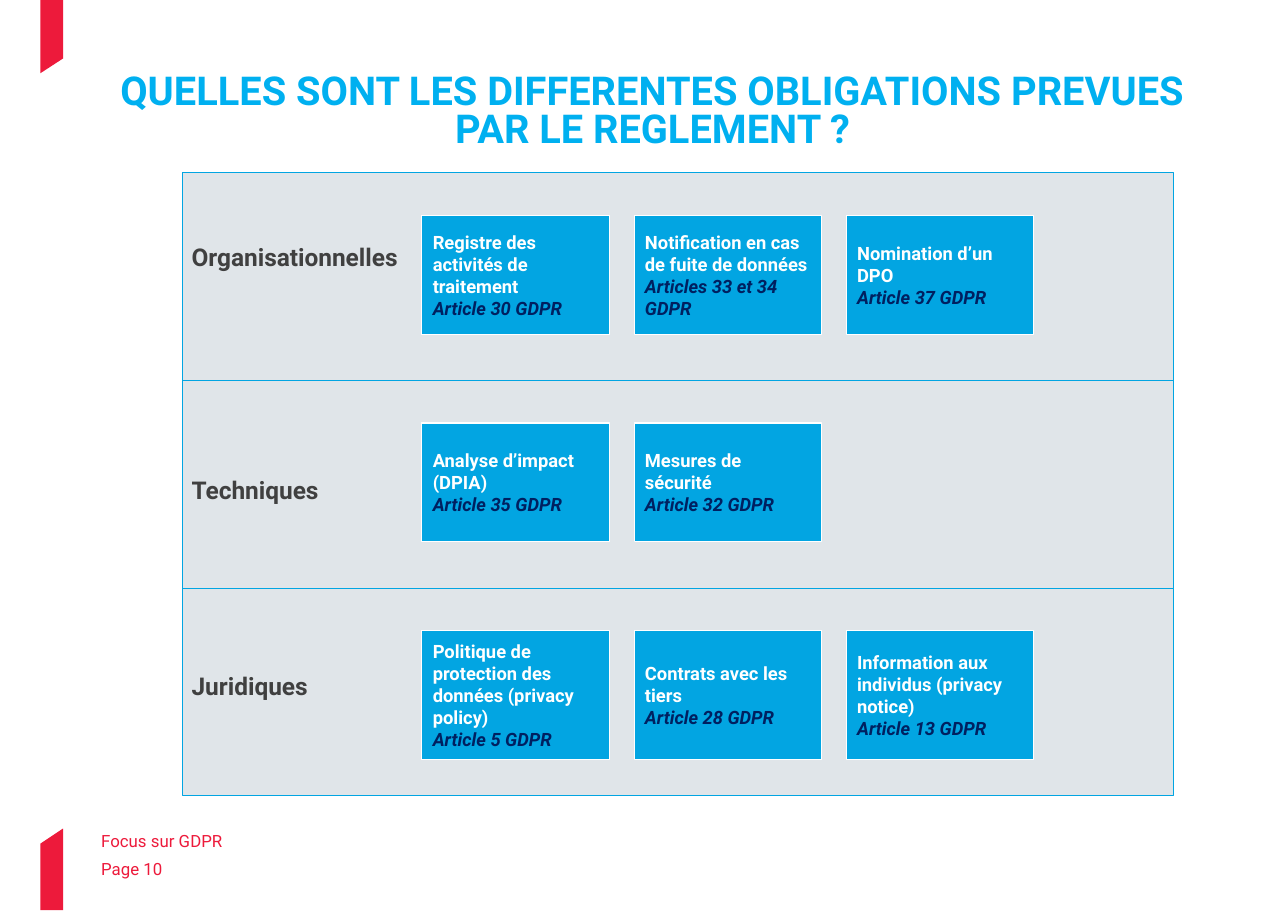
import pptx
import pptx.dml.color
import pptx.enum.shapes
import pptx.enum.text
import pptx.util

BLUE, TITLE_BLUE, NAVY = "02A5E2", "00B0F0", "002060"
RED, WHITE, GREY, DARK = "ED1A3B", "FFFFFF", "E0E5E9", "404040"

BAND_LEFT, BAND_TOP, BAND_WIDTH, BAND_HEIGHT = 14.2, 18.98, 76.9, 22.79
BOX_LEFT, BOX_PITCH, BOX_WIDTH, BOX_OFFSET = 32.76, 16.47, 14.54, 4.66

BANDS = [
    ("Organisationnelles", 0.63, 13.06, [
        ("Registre des activités de traitement", "Article 30 GDPR"),
        ("Notification en cas de fuite de données", "Articles 33 et 34 GDPR"),
        ("Nomination d’un DPO", "Article 37 GDPR"),
    ]),
    ("Techniques", 0.86, 13.06, [
        ("Analyse d’impact (DPIA)", "Article 35 GDPR"),
        ("Mesures de sécurité", "Article 32 GDPR"),
    ]),
    ("Juridiques", 0.75, 14.15, [
        ("Politique de protection des données (privacy policy)", "Article 5 GDPR"),
        ("Contrats avec les tiers", "Article 28 GDPR"),
        ("Information aux individus (privacy notice)", "Article 13 GDPR"),
    ]),
]

CORNER_MARKS = [
    [(3.13, 0), (4.9, 0), (4.9, 6.42), (3.13, 8.05)],
    [(3.13, 92.62), (4.9, 90.95), (4.9, 99.9), (3.13, 99.9)],
]


def color(value):
    return pptx.dml.color.RGBColor.from_string(value)


class SlideBuilder:
    """Draw styled elements on a slide, with lengths in percent of its size."""

    font_name = "Roboto"

    def __init__(self, presentation):
        self.width = presentation.slide_width
        self.height = presentation.slide_height
        self.slide = presentation.slides.add_slide(presentation.slide_layouts[6])

    def across(self, share):
        return round(self.width * share / 100)

    def down(self, share):
        return round(self.height * share / 100)

    def frame(self, left, top, width, height):
        return self.across(left), self.down(top), self.across(width), self.down(height)

    def paint(self, shape, fill, line=None):
        shape.shadow.inherit = False
        shape.fill.solid()
        shape.fill.fore_color.rgb = color(fill)
        if line:
            shape.line.color.rgb = color(line)
            shape.line.width = pptx.util.Pt(0.75)
        else:
            shape.line.fill.background()

    def style(self, paragraph, size, text_color, bold=False, italic=False, centred=False):
        alignment = pptx.enum.text.PP_ALIGN
        paragraph.alignment = alignment.CENTER if centred else alignment.LEFT
        for run in paragraph.runs:
            run.font.name = self.font_name
            run.font.size = pptx.util.Pt(size)
            run.font.bold = bold
            run.font.italic = italic
            run.font.color.rgb = color(text_color)

    def mark(self, points):
        corners = [(self.across(x), self.down(y)) for x, y in points]
        builder = self.slide.shapes.build_freeform(*corners[0])
        builder.add_line_segments(corners[1:], close=True)
        self.paint(builder.convert_to_shape(), RED)

    def rectangle(self, frame, text, fill, line):
        shape = self.slide.shapes.add_shape(
            pptx.enum.shapes.MSO_SHAPE.RECTANGLE, *self.frame(*frame))
        self.paint(shape, fill, line)
        shape.text_frame.word_wrap = True
        shape.text_frame.text = text
        return shape.text_frame

    def band(self, frame, label, label_drop):
        text_frame = self.rectangle(frame, label, GREY, BLUE)
        text_frame.vertical_anchor = pptx.enum.text.MSO_ANCHOR.TOP
        text_frame.margin_left = pptx.util.Inches(0.08)
        text_frame.margin_top = pptx.util.Inches(label_drop)
        self.style(text_frame.paragraphs[0], 16, DARK, bold=True)

    def obligation(self, frame, duty, article):
        text_frame = self.rectangle(frame, duty, BLUE, WHITE)
        text_frame.vertical_anchor = pptx.enum.text.MSO_ANCHOR.MIDDLE
        self.style(text_frame.paragraphs[0], 12, WHITE, bold=True)
        paragraph = text_frame.add_paragraph()
        paragraph.text = article
        self.style(paragraph, 12, NAVY, bold=True, italic=True)

    def text(self, frame, text):
        text_frame = self.slide.shapes.add_textbox(*self.frame(*frame)).text_frame
        text_frame.word_wrap = True
        text_frame.text = text
        return text_frame

    def footer(self, frame, text):
        self.style(self.text(frame, text).paragraphs[0], 11, RED)

    def title(self, frame, text):
        text_frame = self.text(frame, text)
        text_frame.margin_left = text_frame.margin_right = 0
        text_frame.margin_top = text_frame.margin_bottom = 0
        paragraph = text_frame.paragraphs[0]
        paragraph.line_spacing = 0.8
        self.style(paragraph, 26, TITLE_BLUE, bold=True, centred=True)


def main():
    presentation = pptx.Presentation()
    presentation.slide_width = pptx.util.Inches(11.69)
    presentation.slide_height = pptx.util.Inches(8.27)
    builder = SlideBuilder(presentation)

    for points in CORNER_MARKS:
        builder.mark(points)
    builder.footer((7.01, 90.57, 53.89, 3.51), "Focus sur GDPR")
    builder.footer((7.01, 93.71, 9.41, 3.51), "Page 10")

    for row, (label, label_drop, box_height, obligations) in enumerate(BANDS):
        top = BAND_TOP + row * BAND_HEIGHT
        builder.band((BAND_LEFT, top, BAND_WIDTH, BAND_HEIGHT), label, label_drop)
        for column, (duty, article) in enumerate(obligations):
            left = BOX_LEFT + column * BOX_PITCH
            builder.obligation((left, top + BOX_OFFSET, BOX_WIDTH, box_height), duty, article)

    builder.title((6.93, 8.22, 87.51, 8.46),
                  "QUELLES SONT LES DIFFERENTES OBLIGATIONS PREVUES PAR LE REGLEMENT ?")
    presentation.save("out.pptx")


if __name__ == "__main__":
    main()
